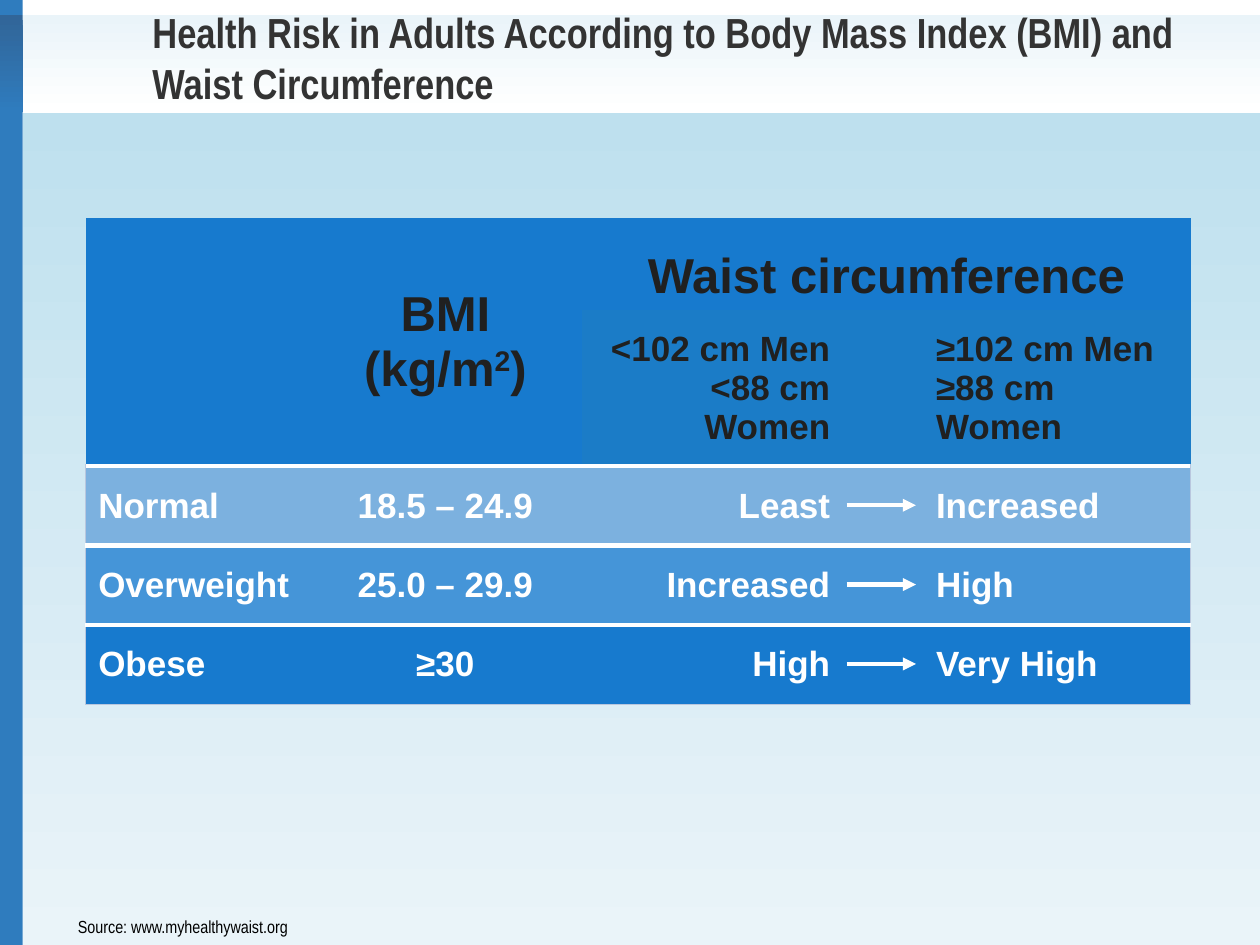
from lxml.etree import SubElement
from pptx import Presentation
from pptx.dml.color import RGBColor
from pptx.enum.shapes import MSO_CONNECTOR, MSO_SHAPE
from pptx.enum.text import MSO_ANCHOR, MSO_AUTO_SIZE, PP_ALIGN
from pptx.oxml import parse_xml
from pptx.oxml.ns import nsdecls, qn
from pptx.util import Inches, Pt

WHITE = RGBColor(0xFF, 0xFF, 0xFF)
BLACK = RGBColor(0x00, 0x00, 0x00)
TITLE_GREY = RGBColor(0x33, 0x33, 0x33)
HEADER_TEXT = RGBColor(0x20, 0x20, 0x20)
SIDEBAR = RGBColor(0x2F, 0x7C, 0xBE)
SIDEBAR_DARK = RGBColor(0x31, 0x65, 0x98)
PALE = RGBColor(0xEA, 0xF4, 0xF9)
SKY = RGBColor(0xBE, 0xE0, 0xEE)
TABLE_BLUE = RGBColor(0x17, 0x7A, 0xCE)
SUBHEADER = RGBColor(0x1B, 0x7C, 0xC7)
NORMAL_BLUE = RGBColor(0x7C, 0xB1, 0xDF)
OVERWEIGHT_BLUE = RGBColor(0x45, 0x95, 0xD8)
EDGE = RGBColor(0xB9, 0xC7, 0xDE)


def set_borders(cell, **sides):
    tcPr = cell._tc.get_or_add_tcPr()
    used = [side for side in "LRTB" if side in sides]
    for i, side in enumerate(used):
        color, width = sides[side]
        tcPr.insert(i, parse_xml(
            f'<a:ln{side} {nsdecls("a")} w="{Pt(width)}"><a:solidFill>'
            f'<a:srgbClr val="{color}"/></a:solidFill></a:ln{side}>'))


def fill_cell(cell, lines, align, size, color):
    tf = cell.text_frame
    for i, line in enumerate(lines):
        p = tf.paragraphs[0] if i == 0 else tf.add_paragraph()
        p.alignment = align
        p.font.name, p.font.size, p.font.bold = "Arial", Pt(size), True
        p.font.color.rgb = color
        p.add_run().text = line
    cell.vertical_anchor = MSO_ANCHOR.MIDDLE


prs = Presentation()
prs.slide_width, prs.slide_height = Inches(10), Inches(7.5)
s = prs.slides.add_slide(prs.slide_layouts[5])

panels = [
    (0, 0, 0.18, 7.5, [SIDEBAR]),
    (0, 0.12, 10, 0.77, [PALE, WHITE]),
    (0, 0.12, 0.18, 0.77, [SIDEBAR_DARK, SIDEBAR]),
    (0.18, 0.9, 9.82, 6.6, [SKY, PALE]),
]
for x, y, w, h, colors in panels:
    sp = s.shapes.add_shape(MSO_SHAPE.RECTANGLE, Inches(x), Inches(y), Inches(w), Inches(h))
    sp.shadow.inherit = False
    sp.line.fill.background()
    if len(colors) == 1:
        sp.fill.solid()
        sp.fill.fore_color.rgb = colors[0]
    else:
        sp.fill.gradient()
        sp.fill.gradient_angle = 270
        for stop, position, color in zip(sp.fill.gradient_stops, (0, 1), colors):
            stop.position, stop.color.rgb = position, color

source = s.shapes.add_textbox(Inches(0.52), Inches(7.22), Inches(1.89), Inches(0.27))
tf = source.text_frame
tf.word_wrap = False
p = tf.paragraphs[0]
p.font.name, p.font.size, p.font.color.rgb = "Arial Narrow", Pt(10), BLACK
p.add_run().text = "Source: www.myhealthywaist.org"

title = s.shapes.title
s.shapes._spTree.append(title._element)
title.left, title.top, title.width, title.height = Inches(1.11), Inches(0), Inches(8.41), Inches(0.91)
tf = title.text_frame
tf.auto_size = MSO_AUTO_SIZE.NONE
tf.vertical_anchor = MSO_ANCHOR.MIDDLE
p = tf.paragraphs[0]
p.alignment = PP_ALIGN.LEFT
p.font.name, p.font.size, p.font.bold = "Arial Narrow", Pt(24), True
p.font.color.rgb = TITLE_GREY
p.add_run().text = "Health Risk in Adults According to Body Mass Index (BMI) and Waist Circumference"

col_widths = [1.77, 2.17, 2.07, 0.64, 2.12]
row_heights = [0.73, 1.24, 0.63, 0.63, 0.63]
table = s.shapes.add_table(5, 5, Inches(0.68), Inches(1.73), Inches(8.77), Inches(3.86)).table
table.first_row = table.horz_banding = False
table._tbl.tblPr.find(qn("a:tableStyleId")).text = "{2D5ABB26-0587-4C30-8999-92F81FD0307C}"
for col, w in zip(table.columns, col_widths):
    col.width = Inches(w)
for row, h in zip(table.rows, row_heights):
    row.height = Inches(h)

row_fills = [TABLE_BLUE, SUBHEADER, NORMAL_BLUE, OVERWEIGHT_BLUE, TABLE_BLUE]
for r, color in enumerate(row_fills):
    for c in range(5):
        cell = table.cell(r, c)
        cell.fill.solid()
        cell.fill.fore_color.rgb = TABLE_BLUE if c < 2 and r == 1 else color
        sides = {}
        if r >= 2 and c == 0:
            sides["L"] = (EDGE, 0.75)
        if r >= 2 and c == 4:
            sides["R"] = (EDGE, 0.75)
        if r in (2, 3):
            sides["T"] = (WHITE, 3)
        if r in (1, 2):
            sides["B"] = (WHITE, 3)
        if r == 4:
            sides["B"] = (EDGE, 0.75)
        set_borders(cell, **sides)

table.cell(0, 0).merge(table.cell(1, 0))
table.cell(0, 1).merge(table.cell(1, 1))
table.cell(0, 2).merge(table.cell(0, 4))
for c in (0, 1):
    set_borders(table.cell(0, c), B=(WHITE, 3))

bmi = table.cell(0, 1)
fill_cell(bmi, ["BMI (kg/m"], PP_ALIGN.CENTER, 28, HEADER_TEXT)
p = bmi.text_frame.paragraphs[0]
power = p.add_run()
power.text = "2"
power._r.get_or_add_rPr().set("baseline", "30000")
p.add_run().text = ")"

waist = table.cell(0, 2)
fill_cell(waist, ["Waist circumference"], PP_ALIGN.CENTER, 28, HEADER_TEXT)
waist.vertical_anchor = MSO_ANCHOR.BOTTOM
fill_cell(table.cell(1, 2), ["<102 cm Men", "<88 cm Women"], PP_ALIGN.RIGHT, 20, HEADER_TEXT)
fill_cell(table.cell(1, 4), ["≥102 cm Men", "≥88 cm Women"], PP_ALIGN.LEFT, 20, HEADER_TEXT)

risks = [
    ("Normal", "18.5 – 24.9", "Least", "Increased"),
    ("Overweight", "25.0 – 29.9", "Increased", "High"),
    ("Obese", "≥30", "High", "Very High"),
]
columns = [(0, PP_ALIGN.LEFT), (1, PP_ALIGN.CENTER), (2, PP_ALIGN.RIGHT), (4, PP_ALIGN.LEFT)]
for i, texts in enumerate(risks):
    for (c, align), text in zip(columns, texts):
        fill_cell(table.cell(i + 2, c), [text], align, 20, WHITE)

for i in range(len(risks)):
    y = Inches(4.01 + 0.63 * i)
    arrow = s.shapes.add_connector(MSO_CONNECTOR.STRAIGHT, Inches(6.72), y, Inches(7.27), y)
    arrow.line.color.rgb, arrow.line.width = WHITE, Pt(2.5)
    SubElement(arrow.line._get_or_add_ln(), qn("a:tailEnd"), type="triangle")
    SubElement(arrow._element.spPr, qn("a:effectLst"))

prs.save("out.pptx")
